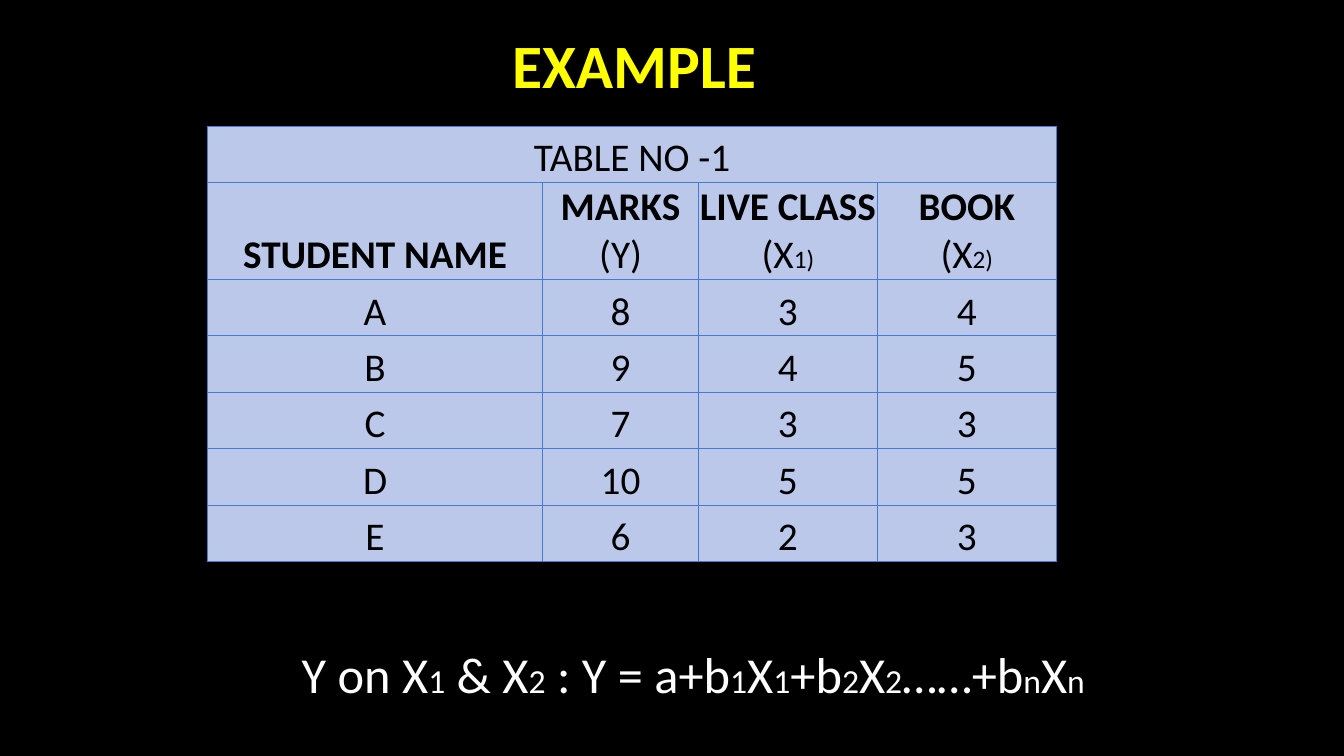
import pptx
import pptx.util
import pptx.dml.color
import pptx.enum.text
import pptx.oxml
import pptx.oxml.ns

COLORS = {"back": "000000", "title": "FFFF00", "cell": "BBC8EA",
          "edge": "477BD1", "dark": "000000", "light": "FFFFFF"}
FONT = "Calibri"
TITLE = "EXAMPLE"
CAPTION = "TABLE NO -1"
HEADS = [
    [["STUDENT NAME"]],
    [["MARKS"], ["(Y)"]],
    [["LIVE CLASS"], ["(X", "1)"]],
    [["BOOK"], ["(X", "2)"]],
]
MARKS = [("A", 8, 3, 4), ("B", 9, 4, 5), ("C", 7, 3, 3),
         ("D", 10, 5, 5), ("E", 6, 2, 3)]
FORMULA = [" Y on X", "1", " & X", "2", " : Y = a+b", "1", "X", "1",
           "+b", "2", "X", "2", "……+b", "n", "X", "n"]
WIDTHS = [3.32, 1.55, 1.77, 1.78]
ROW, HEAD = 0.56, 0.96

Inches, Pt = pptx.util.Inches, pptx.util.Pt
ANCHOR = pptx.enum.text.MSO_ANCHOR


def color(name):
    return pptx.dml.color.RGBColor.from_string(COLORS[name])


def write(para, parts, size, small, tint, bold=False):
    para.alignment = pptx.enum.text.PP_ALIGN.CENTER
    font = para.font
    font.name, font.bold = FONT, bold
    font.color.rgb = color(tint)
    if len(parts) == 1:
        font.size = Pt(size)
    for i, part in enumerate(parts):
        run = para.add_run()
        run.text = part
        if len(parts) > 1:
            run.font.size = Pt(small if i % 2 else size)


def place(shape, left, top, width, height):
    shape.left, shape.top = Inches(left), Inches(top)
    shape.width, shape.height = Inches(width), Inches(height)


def border(cell):
    props = cell._tc.get_or_add_tcPr()
    for i, side in enumerate(("lnL", "lnR", "lnT", "lnB")):
        props.insert(i, pptx.oxml.parse_xml(
            f'<a:{side} {pptx.oxml.ns.nsdecls("a")} w="{Pt(0.75)}"><a:solidFill>'
            f'<a:srgbClr val="{COLORS["edge"]}"/></a:solidFill></a:{side}>'))


def build_table(slide):
    rows = [[[[CAPTION]], [], [], []], HEADS]
    rows += [[[[str(value)]] for value in row] for row in MARKS]
    heights = [HEAD if row is HEADS else ROW for row in rows]
    table = slide.shapes.add_table(
        len(rows), len(WIDTHS), Inches(2.06), Inches(1.25),
        Inches(sum(WIDTHS)), Inches(sum(heights))).table
    table.first_row = table.horz_banding = False
    for col, width in zip(table.columns, WIDTHS):
        col.width = Inches(width)
    for r, row in enumerate(rows):
        table.rows[r].height = Inches(heights[r])
        for c, lines in enumerate(row):
            cell = table.cell(r, c)
            cell.margin_left = cell.margin_right = cell.margin_top = Inches(0.01)
            cell.margin_bottom = 0
            cell.vertical_anchor = ANCHOR.BOTTOM
            cell.fill.solid()
            cell.fill.fore_color.rgb = color("cell")
            border(cell)
            frame = cell.text_frame
            for i, parts in enumerate(lines):
                para = frame.add_paragraph() if i else frame.paragraphs[0]
                write(para, parts, 28, 18, "dark", row is HEADS and i == 0)
    table.cell(0, 0).merge(table.cell(0, len(WIDTHS) - 1))


def main():
    deck = pptx.Presentation()
    deck.slide_width, deck.slide_height = Inches(13.33), Inches(7.5)
    slide = deck.slides.add_slide(deck.slide_layouts[5])
    slide.background.fill.solid()
    slide.background.fill.fore_color.rgb = color("back")

    title = slide.shapes.title
    place(title, 0.75, 0.13, 11.08, 1.01)
    title.text_frame.vertical_anchor = ANCHOR.MIDDLE
    write(title.text_frame.paragraphs[0], [TITLE], 44, 44, "title", True)

    build_table(slide)

    box = slide.shapes.add_textbox(0, 0, 0, 0)
    place(box, 0.4, 6.08, 12.84, 1.2)
    box.text_frame.word_wrap = True
    box.text_frame.vertical_anchor = ANCHOR.MIDDLE
    write(box.text_frame.paragraphs[0], FORMULA, 36, 24, "light")
    deck.save("out.pptx")


if __name__ == "__main__":
    main()
